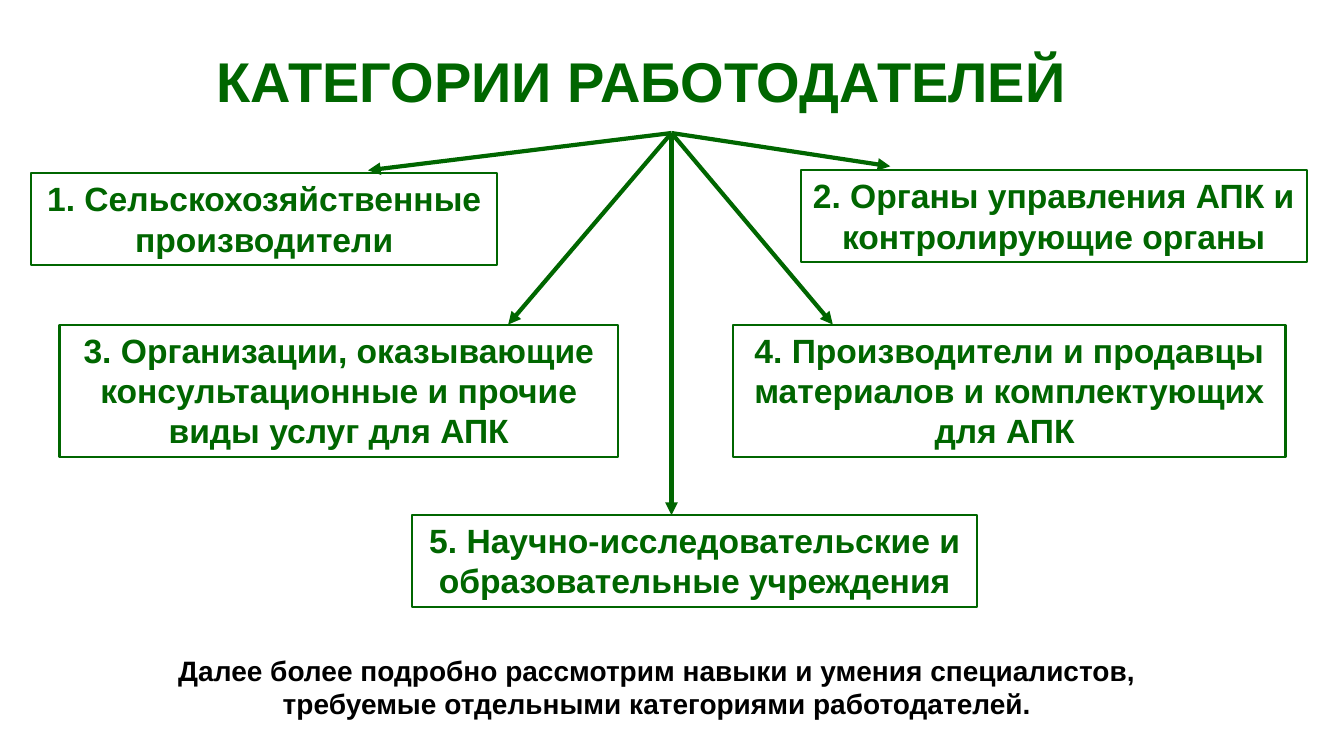
from pptx import Presentation
from pptx.dml.color import RGBColor
from pptx.enum.shapes import MSO_CONNECTOR, MSO_SHAPE
from pptx.enum.text import MSO_ANCHOR, MSO_AUTO_SIZE, PP_ALIGN
from pptx.oxml.ns import qn
from pptx.util import Inches, Pt
from lxml.etree import SubElement

COLORS = {"green": "006600", "black": "000000"}
FONT = "Arial"

# Left, top, width, height and wording of each category
CATEGORIES = [
    (0.31, 1.72, 4.62, 0.91, "1. Сельскохозяйственные производители"),
    (7.94, 1.69, 5.02, 0.91, "2. Органы управления АПК и контролирующие органы"),
    (0.59, 3.22, 5.54, 1.31,
     "3. Организации, оказывающие консультационные и прочие виды услуг для АПК"),
    (7.27, 3.22, 5.48, 1.31,
     "4. Производители и продавцы материалов и комплектующих для АПК "),
    (4.09, 5.11, 5.6, 0.91,
     "5. Научно-исследовательские и образовательные учреждения"),
]
ARROW_START = (6.66, 1.32)
ARROW_ENDS = [(3.65, 1.69), (8.83, 1.65), (5.04, 3.22), (8.26, 3.22), (6.66, 5.11)]


class SlideBuilder:
    """Holds the style and the current slide."""

    def __init__(self, page):
        self.page = page

    def color(self, name):
        return RGBColor.from_string(COLORS[name])

    def add_text(self, box, text, size, color="green", anchor=MSO_ANCHOR.TOP):
        frame = box.text_frame
        frame_format = {"word_wrap": True, "auto_size": MSO_AUTO_SIZE.NONE,
                        "vertical_anchor": anchor}
        for name, value in frame_format.items():
            setattr(frame, name, value)
        para = frame.paragraphs[0]
        para.alignment = PP_ALIGN.CENTER
        span = para.add_run()
        span.text = text
        for name, value in {"name": FONT, "size": Pt(size), "bold": True}.items():
            setattr(span.font, name, value)
        span.font.color.rgb = self.color(color)

    def title(self, left, top, width, height, text):
        box = self.page.shapes.title
        place = {"left": left, "top": top, "width": width, "height": height}
        for name, value in place.items():
            setattr(box, name, Inches(value))
        self.add_text(box, text, 40, anchor=MSO_ANCHOR.MIDDLE)

    def category(self, left, top, width, height, text):
        box = self.page.shapes.add_shape(
            MSO_SHAPE.RECTANGLE, Inches(left), Inches(top), Inches(width), Inches(height))
        box.shadow.inherit = False
        box.fill.background()
        box.line.color.rgb = self.color("green")
        box.line.width = Pt(1.5)
        self.add_text(box, text, 24)

    def arrow(self, start, end):
        points = [Inches(value) for value in (*start, *end)]
        arrow = self.page.shapes.add_connector(MSO_CONNECTOR.STRAIGHT, *points)
        arrow.line.color.rgb = self.color("green")
        arrow.line.width = Pt(3)
        properties = arrow._element.spPr
        SubElement(properties.find(qn("a:ln")), qn("a:tailEnd"), type="triangle")
        SubElement(properties, qn("a:effectLst"))

    def note(self, left, top, width, height, text):
        box = self.page.shapes.add_textbox(
            Inches(left), Inches(top), Inches(width), Inches(height))
        self.add_text(box, text, 20, "black")


def main():
    deck = Presentation()
    deck.slide_width, deck.slide_height = Inches(13.33), Inches(7.5)
    builder = SlideBuilder(deck.slides.add_slide(deck.slide_layouts[5]))

    # Title
    builder.title(0.31, 0.33, 12.1, 0.93, "КАТЕГОРИИ РАБОТОДАТЕЛЕЙ")

    # Categories and the arrows fanning out to them
    for category in CATEGORIES:
        builder.category(*category)
    for end in ARROW_ENDS:
        builder.arrow(ARROW_START, end)

    # Closing note
    builder.note(1.16, 6.43, 10.71, 0.77,
                 "Далее более подробно рассмотрим навыки и умения специалистов, "
                 "требуемые отдельными категориями работодателей.")

    deck.save("out.pptx")


if __name__ == "__main__":
    main()
